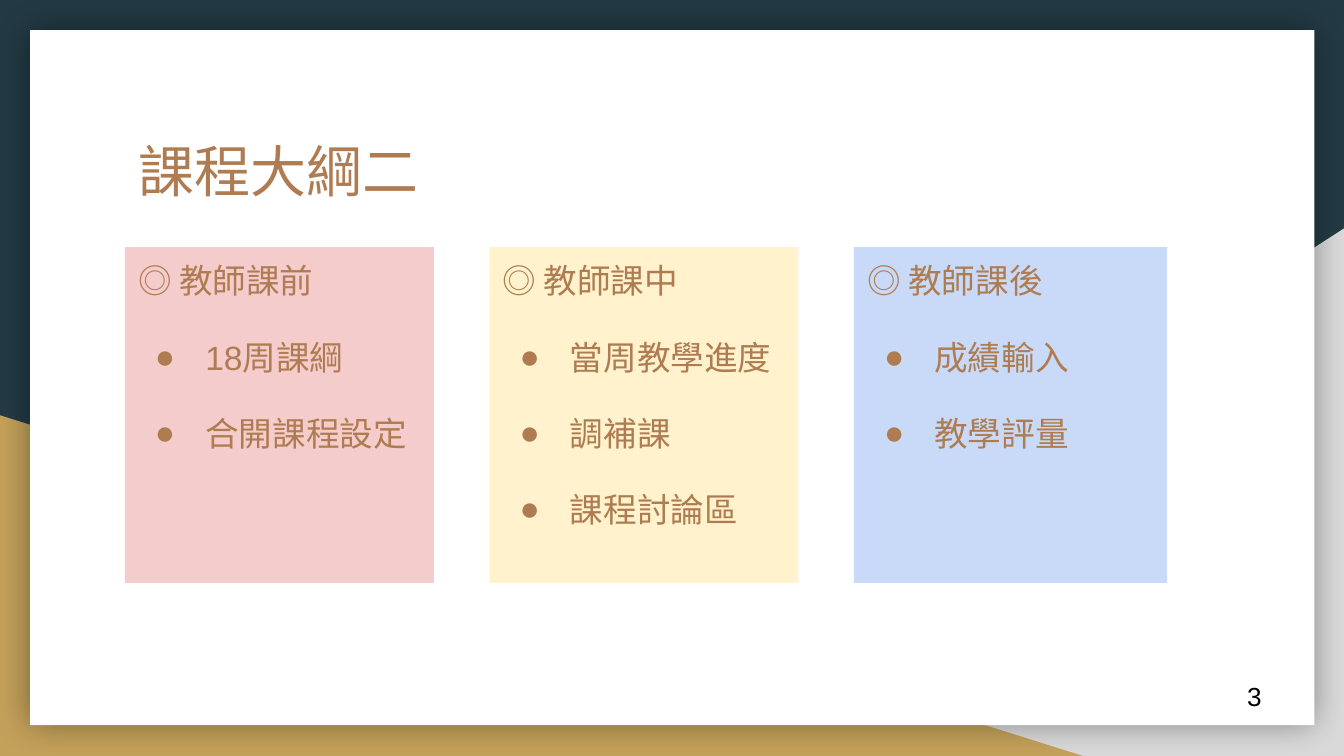
"""Build the course outline slide with three teacher-phase columns."""
import dataclasses

import lxml.etree
import pptx
import pptx.dml.color
import pptx.enum.shapes
import pptx.enum.text
import pptx.oxml
import pptx.oxml.ns
import pptx.util

Cm = pptx.util.Cm
Pt = pptx.util.Pt
qn = pptx.oxml.ns.qn
MSO_SHAPE = pptx.enum.shapes.MSO_SHAPE
ANCHOR = pptx.enum.text.MSO_ANCHOR
BROWN = "AF7B51"
FONT = "Arial"
COLUMN_LEFT, COLUMN_TOP, COLUMN_PITCH, COLUMN_HEIGHT = 2.36, 4.67, 6.89, 6.35


@dataclasses.dataclass
class Box:
    left: float
    top: float
    width: float
    height: float


@dataclasses.dataclass
class Column:
    heading: str
    items: list[str]
    color: str
    width: float = 5.84


COLUMNS = [
    Column("◎ 教師課前", ["18周課綱", "合開課程設定"], "F4CCCC"),
    Column("◎ 教師課中", ["當周教學進度", "調補課", "課程討論區"], "FFF2CC"),
    Column("◎ 教師課後", ["成績輸入", "教學評量"], "C9DAF8", 5.92),
]


def rgb(color: str) -> pptx.dml.color.RGBColor:
    return pptx.dml.color.RGBColor.from_string(color)


def place(sp, box: Box) -> None:
    sp.left, sp.top = Cm(box.left), Cm(box.top)
    sp.width, sp.height = Cm(box.width), Cm(box.height)


def add_block(s, kind, box: Box, color: str):
    sp = s.shapes.add_shape(kind, Cm(box.left), Cm(box.top), Cm(box.width), Cm(box.height))
    sp.shadow.inherit = False
    sp.fill.solid()
    sp.fill.fore_color.rgb = rgb(color)
    sp.line.fill.background()
    return sp


def set_frame(sp, anchor=ANCHOR.TOP):
    tf = sp.text_frame
    tf.word_wrap = True
    tf.auto_size = pptx.enum.text.MSO_AUTO_SIZE.NONE
    tf.vertical_anchor = anchor
    tf.margin_left = tf.margin_right = tf.margin_top = tf.margin_bottom = Cm(0.25)
    return tf


def add_text(p, text: str, size: int, color: str = BROWN) -> None:
    p.alignment = pptx.enum.text.PP_ALIGN.LEFT
    r = p.add_run()
    r.text = text
    r.font.name = FONT
    r.font.size = Pt(size)
    r.font.color.rgb = rgb(color)


def add_bullet(p) -> None:
    p.line_spacing = 1.15
    p.space_before = Pt(16)
    pPr = p._p.get_or_add_pPr()
    pPr.set("marL", str(Cm(1.27)))
    pPr.set("indent", str(Cm(-0.95)))
    color = lxml.etree.SubElement(pPr, qn("a:buClr"))
    lxml.etree.SubElement(color, qn("a:srgbClr"), val=BROWN)
    lxml.etree.SubElement(pPr, qn("a:buFont"), typeface=FONT)
    lxml.etree.SubElement(pPr, qn("a:buChar"), char="●")


def add_glow_shadow(sp) -> None:
    effects = sp.element.spPr.find(qn("a:effectLst"))
    shadow = lxml.etree.SubElement(
        effects, qn("a:outerShdw"), blurRad=str(Pt(18)), dist="0", dir="0",
        algn="ctr", rotWithShape="0")
    color = lxml.etree.SubElement(shadow, qn("a:srgbClr"), val="000000")
    lxml.etree.SubElement(color, qn("a:alpha"), val="40000")


def add_backdrop(s) -> None:
    s.background.fill.solid()
    s.background.fill.fore_color.rgb = rgb("233A44")
    triangle = MSO_SHAPE.RIGHT_TRIANGLE
    gray = add_block(s, triangle, Box(9.96, 4.32, 15.44, 9.97), "D9D9D9")
    gray.element.spPr.xfrm.set("flipH", "1")
    add_block(s, triangle, Box(0, 7.85, 20.47, 6.44), "C4A15A")
    card = add_block(s, MSO_SHAPE.RECTANGLE, Box(0.57, 0.57, 24.27, 13.14), "FFFFFF")
    add_glow_shadow(card)


def add_title(s, text: str) -> None:
    title = s.shapes.title
    s.shapes.element.append(title.element)
    place(title, Box(COLUMN_LEFT, 2.34, 20.85, 2.64))
    add_text(set_frame(title).paragraphs[0], text, 30)


def add_column(s, column: Column, left: float) -> None:
    box = Box(left, COLUMN_TOP, column.width, COLUMN_HEIGHT)
    tf = set_frame(add_block(s, MSO_SHAPE.RECTANGLE, box, column.color))
    add_text(tf.paragraphs[0], column.heading, 18)
    for item in column.items:
        p = tf.add_paragraph()
        add_text(p, item, 18)
        add_bullet(p)


def add_page_number(s, number: str) -> None:
    sp = s.shapes.add_textbox(Cm(23.32), Cm(12.62), Cm(1.52), Cm(1.09))
    add_text(set_frame(sp, ANCHOR.MIDDLE).paragraphs[0], number, 14, "000000")


def main() -> None:
    prs = pptx.Presentation()
    prs.slide_width, prs.slide_height = Cm(25.4), Cm(14.29)
    s = prs.slides.add_slide(prs.slide_layouts[5])
    add_backdrop(s)
    add_title(s, "課程大綱二")
    for i, column in enumerate(COLUMNS):
        add_column(s, column, COLUMN_LEFT + i * COLUMN_PITCH)
    add_page_number(s, "3")
    prs.save("out.pptx")


if __name__ == "__main__":
    main()
